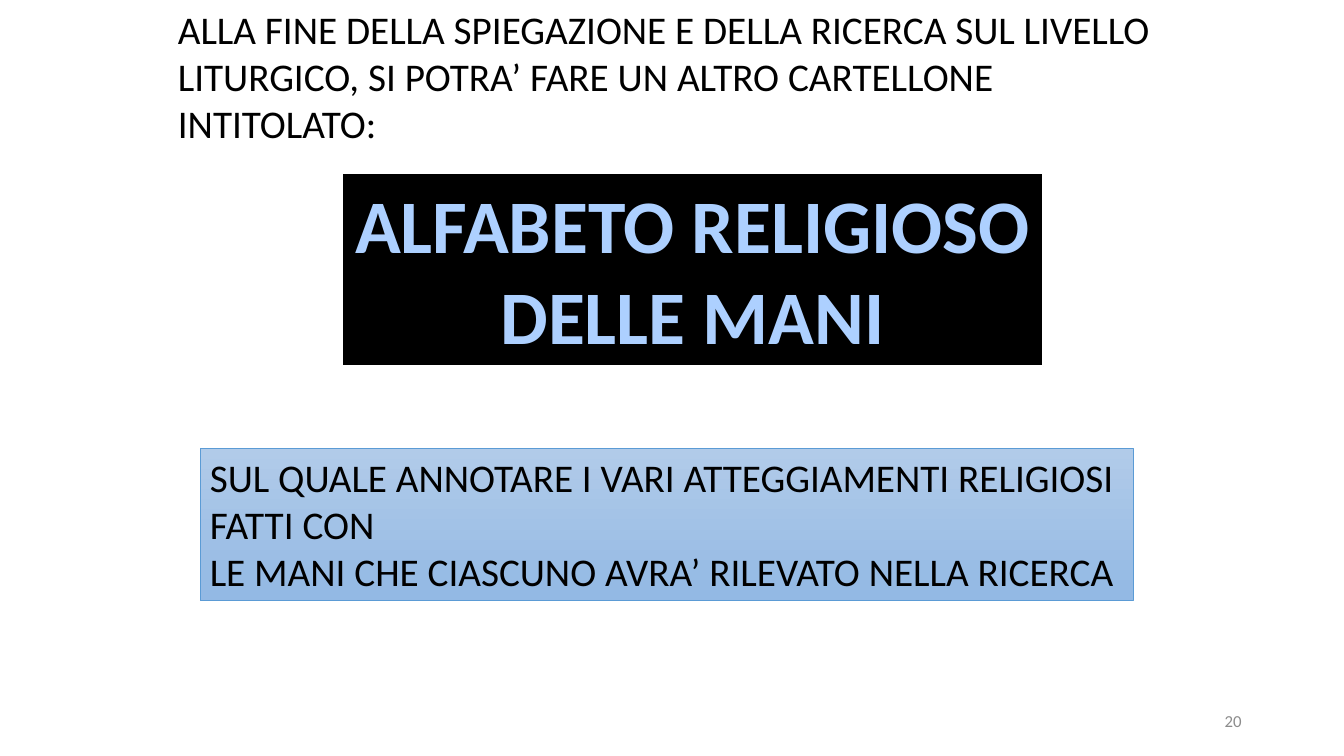
from dataclasses import dataclass

from pptx import Presentation
from pptx.dml.color import RGBColor
from pptx.enum.shapes import MSO_SHAPE
from pptx.enum.text import MSO_ANCHOR, MSO_AUTO_SIZE, PP_ALIGN
from pptx.shapes.autoshape import Shape
from pptx.util import Inches, Pt

COLUMNS, ROWS = 160, 90
FONT = "Calibri"


@dataclass(frozen=True)
class Area:
    """Place on the slide, in grid columns and rows."""
    column: float
    row: float
    columns: float
    rows: float


@dataclass(frozen=True)
class TextStyle:
    size: float
    color: str = "000000"
    bold: bool = False
    alignment: PP_ALIGN = PP_ALIGN.LEFT
    anchor: MSO_ANCHOR = MSO_ANCHOR.TOP
    wrap: bool = True


INTRO_AREA = Area(20, 0, 120, 29.5)
BANNER_AREA = Area(40.7, 20.6, 83.5, 23)
NOTE_AREA = Area(23.8, 53.4, 111.1, 18.1)
NUMBER_AREA = Area(113, 83.4, 36, 4.8)

INTRO_STYLE = TextStyle(28)
BANNER_STYLE = TextStyle(54, "ADD0FF", True, PP_ALIGN.CENTER, wrap=False)
NOTE_STYLE = TextStyle(28, wrap=False)
NUMBER_STYLE = TextStyle(12, "8C8C8C", alignment=PP_ALIGN.RIGHT, anchor=MSO_ANCHOR.MIDDLE)

INTRO_LINES = [
    "ALLA FINE DELLA SPIEGAZIONE E DELLA RICERCA SUL LIVELLO",
    "LITURGICO, SI POTRA’ FARE UN ALTRO CARTELLONE INTITOLATO:",
]
BANNER_LINES = ["ALFABETO RELIGIOSO", "DELLE MANI"]
NOTE_LINES = [
    "SUL QUALE ANNOTARE I VARI ATTEGGIAMENTI RELIGIOSI",
    "FATTI CON",
    "LE MANI CHE CIASCUNO AVRA’ RILEVATO NELLA RICERCA",
]

presentation = Presentation()
presentation.slide_width = Inches(13.33)
presentation.slide_height = Inches(7.5)
slide = presentation.slides.add_slide(presentation.slide_layouts[5])


def rgb(color: str) -> RGBColor:
    return RGBColor.from_string(color)


def place(area: Area) -> tuple[int, int, int, int]:
    """Turn grid units into left, top, width and height."""
    column = presentation.slide_width / COLUMNS
    row = presentation.slide_height / ROWS
    return (round(area.column * column), round(area.row * row),
            round(area.columns * column), round(area.rows * row))


def write(shape: Shape, lines: list[str], style: TextStyle) -> None:
    frame = shape.text_frame
    frame.auto_size = MSO_AUTO_SIZE.NONE
    frame.word_wrap = style.wrap
    frame.vertical_anchor = style.anchor
    for index, line in enumerate(lines):
        paragraph = frame.add_paragraph() if index else frame.paragraphs[0]
        paragraph.alignment = style.alignment
        run = paragraph.add_run()
        run.text = line
        run.font.name = FONT
        run.font.size = Pt(style.size)
        run.font.bold = style.bold
        run.font.color.rgb = rgb(style.color)


def outline(shape: Shape, color: str, width: float) -> None:
    shape.line.color.rgb = rgb(color)
    shape.line.width = Pt(width)


def add_text(area: Area, lines: list[str], style: TextStyle) -> None:
    write(slide.shapes.add_textbox(*place(area)), lines, style)


def add_banner() -> None:
    banner = slide.shapes.title
    banner.left, banner.top, banner.width, banner.height = place(BANNER_AREA)
    banner.fill.solid()
    banner.fill.fore_color.rgb = rgb("000000")
    outline(banner, "FFFFFF", 1.5)
    write(banner, BANNER_LINES, BANNER_STYLE)


def add_note() -> None:
    note = slide.shapes.add_shape(MSO_SHAPE.RECTANGLE, *place(NOTE_AREA))
    note.shadow.inherit = False
    note.fill.gradient()
    note.fill.gradient_angle = 270
    for stop, color in zip(note.fill.gradient_stops, ("B1CBE9", "93B9E4")):
        stop.color.rgb = rgb(color)
    outline(note, "5B9BD5", 0.5)
    write(note, NOTE_LINES, NOTE_STYLE)


def main() -> None:
    add_text(INTRO_AREA, INTRO_LINES, INTRO_STYLE)
    add_banner()
    add_note()
    add_text(NUMBER_AREA, ["20"], NUMBER_STYLE)
    presentation.save("out.pptx")


if __name__ == "__main__":
    main()
